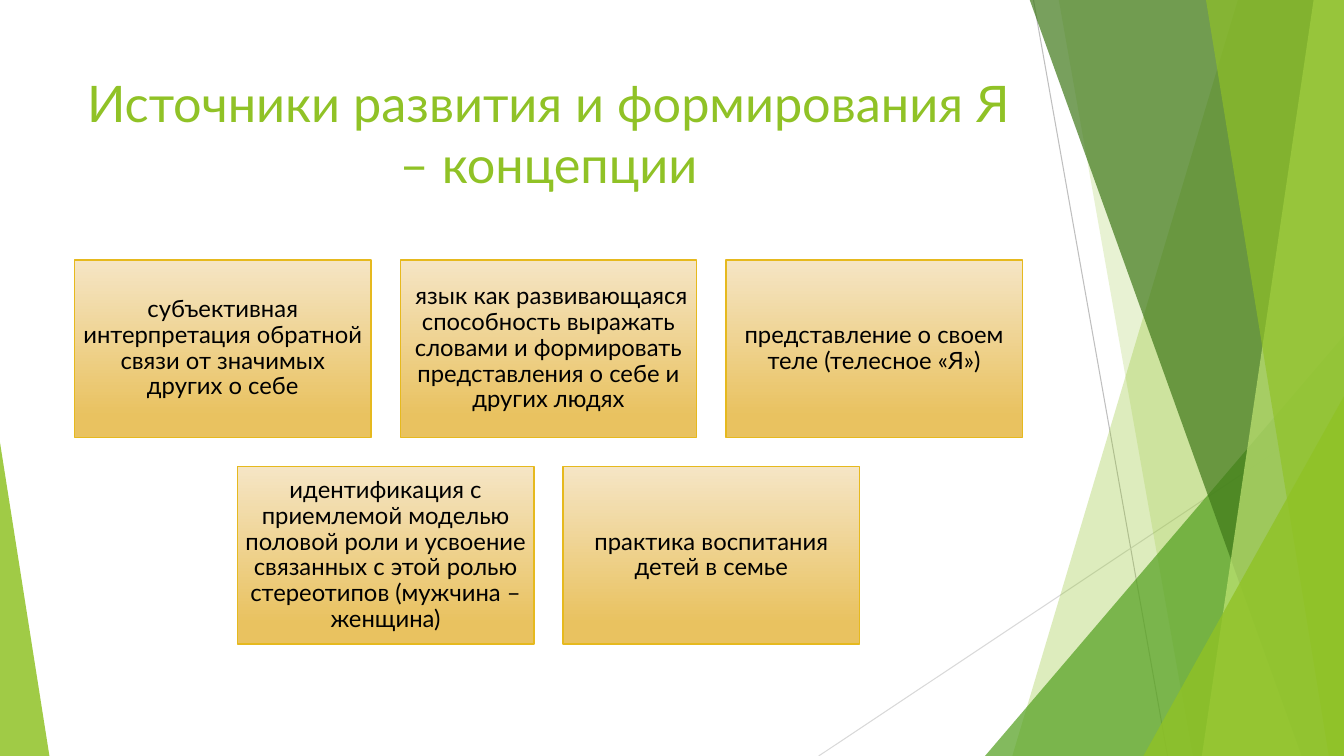
from lxml import etree
from pptx import Presentation
from pptx import util as u
from pptx.dml.color import RGBColor
from pptx.enum import shapes, text
from pptx.oxml.ns import qn
from pptx.util import Inches

COLORS = {
    "lime": "90C226", "green": "54A021", "forest": "3F7819", "pale": "C0E474",
    "gray": "BFBFBF", "light_gray": "D9D9D9",
    "cream": "F5E5C5", "gold": "E9C260", "border": "E6B91E", "black": "000000",
}
WIDTH, HEIGHT = 13.33, 7.5
FACET_TOP = -0.01

TITLE = "Источники развития и формирования Я – концепции"
SOURCE_ROWS = [
    ["субъективная интерпретация обратной связи от значимых других о себе",
     " язык как развивающаяся способность выражать словами и формировать "
     "представления о себе и других людях",
     "представление о своем теле (телесное «Я»)"],
    ["идентификация с приемлемой моделью половой роли и усвоение связанных "
     "с этой ролью стереотипов (мужчина – женщина)",
     "практика воспитания детей в семье"],
]
CARD_W, CARD_H, CARD_GAP = 2.94, 1.76, 0.29
CARDS_CENTER, CARDS_TOP = 5.44, 2.58

TITLE_FRAME = {"word_wrap": True, "vertical_anchor": text.MSO_ANCHOR.TOP}
CARD_FRAME = {
    "word_wrap": True, "vertical_anchor": text.MSO_ANCHOR.MIDDLE,
    "margin_left": Inches(0.07), "margin_right": Inches(0.07),
    "margin_top": Inches(0.07), "margin_bottom": Inches(0.07),
}
TITLE_PARAGRAPH = {"alignment": text.PP_ALIGN.CENTER}
CARD_PARAGRAPH = {"alignment": text.PP_ALIGN.CENTER, "line_spacing": 0.9,
                  "space_after": u.Pt(6)}


def rgb(name):
    return RGBColor.from_string(COLORS[name])


def apply_format(target, values):
    for name, value in values.items():
        setattr(target, name, value)


def write_text(frame, wording, frame_format, paragraph_format, size, color):
    apply_format(frame, frame_format)
    paragraph = frame.paragraphs[0]
    apply_format(paragraph, paragraph_format)
    run = paragraph.add_run()
    run.text = wording
    apply_format(run.font, {"name": "Lato", "size": u.Pt(size)})
    run.font.color.rgb = rgb(color)


def paint(facet, color, opacity):
    """Fill a facet with a see-through colour and no outline."""
    facet.shadow.inherit = False
    facet.line.fill.background()
    facet.fill.solid()
    facet.fill.fore_color.rgb = rgb(color)
    tint = facet.fill._xPr.find(qn("a:solidFill"))[0]
    etree.SubElement(tint, qn("a:alpha"), val=str(opacity * 1000))


def add_ray(slide, start, end, color):
    ray = slide.shapes.add_connector(
        shapes.MSO_CONNECTOR.STRAIGHT, *map(Inches, start + end))
    ray.line.color.rgb = rgb(color)
    ray.line.width = u.Pt(0.75)
    etree.SubElement(ray._element.spPr, qn("a:effectLst"))


def add_facet(slide, top_left, bottom_left, color, opacity):
    """Band from a slanted left edge to the right edge of the slide."""
    corners = [(Inches(x), Inches(y)) for x, y in (
        (top_left, FACET_TOP), (WIDTH, FACET_TOP),
        (WIDTH, HEIGHT), (bottom_left, HEIGHT))]
    outline = slide.shapes.build_freeform(*corners[0], scale=1.0)
    outline.add_line_segments(corners[1:], close=True)
    paint(outline.convert_to_shape(), color, opacity)


def add_corner(slide, left, top, width, apex, color, opacity):
    """Triangle standing on the bottom edge of the slide."""
    corner = slide.shapes.add_shape(
        shapes.MSO_SHAPE.ISOSCELES_TRIANGLE,
        *map(Inches, (left, top, width, HEIGHT - top)))
    corner.adjustments[0] = apex
    paint(corner, color, opacity)


def add_title(slide):
    title = slide.shapes.add_textbox(*map(Inches, (0.74, 0.67, 9.4, 1.44)))
    write_text(title.text_frame, TITLE, TITLE_FRAME, TITLE_PARAGRAPH, 36, "lime")


def add_card(slide, left, top, wording):
    card = slide.shapes.add_shape(
        shapes.MSO_SHAPE.RECTANGLE, *map(Inches, (left, top, CARD_W, CARD_H)))
    card.shadow.inherit = False
    card.fill.gradient()
    card.fill.gradient_angle = 270
    for stop, (color, position) in zip(card.fill.gradient_stops,
                                       (("cream", 0), ("gold", 0.88))):
        stop.color.rgb = rgb(color)
        stop.position = position
    card.line.color.rgb = rgb("border")
    card.line.width = u.Pt(1)
    write_text(card.text_frame, wording, CARD_FRAME, CARD_PARAGRAPH, 17, "black")


def add_cards(slide):
    """Rows of cards, each row centred under the title."""
    for row, wordings in enumerate(SOURCE_ROWS):
        count = len(wordings)
        row_width = count * CARD_W + (count - 1) * CARD_GAP
        row_left = CARDS_CENTER - row_width / 2
        top = CARDS_TOP + row * (CARD_H + CARD_GAP)
        for column, wording in enumerate(wordings):
            add_card(slide, row_left + column * (CARD_W + CARD_GAP), top, wording)


def add_backdrop(slide):
    add_ray(slide, (10.25, 0), (11.58, HEIGHT), "gray")
    add_ray(slide, (WIDTH, 4.03), (8.12, HEIGHT), "light_gray")
    add_facet(slide, 12.28, 10.04, "lime", 30)
    add_facet(slide, 10.5, 11.83, "lime", 20)
    add_corner(slide, 9.77, 3.33, 3.56, 1, "green", 72)
    add_facet(slide, 10.21, 12.91, "forest", 70)
    add_facet(slide, 13.03, 11.92, "pale", 70)
    add_facet(slide, 11.96, 13.18, "lime", 65)
    add_corner(slide, 11.34, 3.93, 1.99, 1, "lime", 80)
    add_corner(slide, 0, 4.39, 0.49, 0, "lime", 85)


def main():
    deck = Presentation()
    deck.slide_width, deck.slide_height = Inches(WIDTH), Inches(HEIGHT)
    slide = deck.slides.add_slide(deck.slide_layouts[6])
    add_backdrop(slide)
    add_title(slide)
    add_cards(slide)
    deck.save("out.pptx")


if __name__ == "__main__":
    main()
